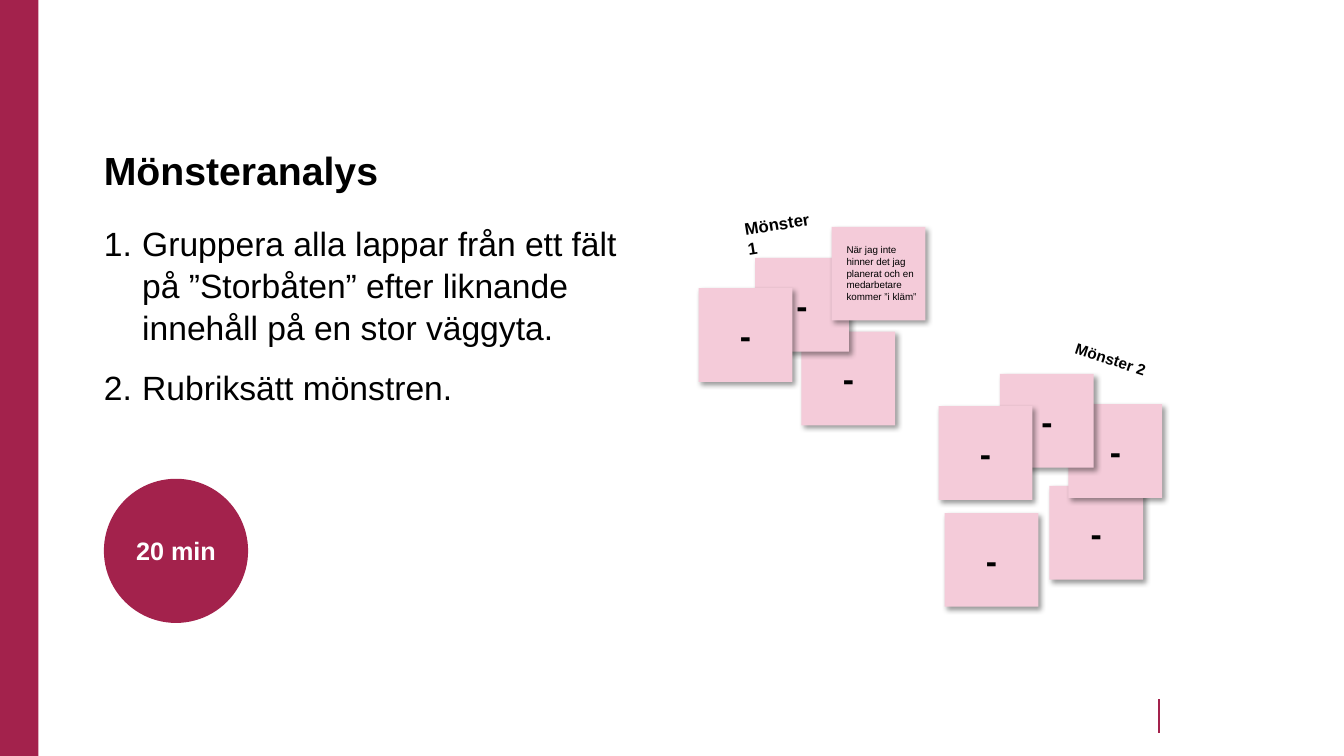
"""Build the pattern analysis slide with two clusters of sticky notes."""
from lxml import etree
from pptx import Presentation
from pptx.dml.color import RGBColor
from pptx.enum.shapes import MSO_CONNECTOR, MSO_SHAPE
from pptx.enum.text import MSO_ANCHOR, MSO_AUTO_SIZE, PP_ALIGN
from pptx.oxml import parse_xml
from pptx.oxml.ns import nsdecls, qn
from pptx.util import Inches, Pt

RECT, OVAL = MSO_SHAPE.RECTANGLE, MSO_SHAPE.OVAL
LINE = MSO_CONNECTOR.STRAIGHT
LEFT, CENTER = PP_ALIGN.LEFT, PP_ALIGN.CENTER
MIDDLE, BOTTOM = MSO_ANCHOR.MIDDLE, MSO_ANCHOR.BOTTOM
GROW, FIXED = MSO_AUTO_SIZE.SHAPE_TO_FIT_TEXT, MSO_AUTO_SIZE.NONE

WINE = RGBColor(0xA3, 0x22, 0x4C)
PINK = RGBColor(0xF4, 0xCB, 0xD9)
BLACK = RGBColor(0, 0, 0)
WHITE = RGBColor(255, 255, 255)

deck = Presentation()
deck.slide_width, deck.slide_height = Inches(13.33), Inches(7.5)
COL, ROW = deck.slide_width / 100, deck.slide_height / 100
slide = deck.slides.add_slide(deck.slide_layouts[1])
shapes = slide.shapes


def spot(col, row, wide, high):
    """Turn shares of the slide, in percent, into a place and size."""
    return int(col * COL), int(row * ROW), int(wide * COL), int(high * ROW)


def say(para, text, size, color=BLACK, bold=False, align=LEFT):
    """Add one run of text to a paragraph."""
    para.alignment = align
    run = para.add_run()
    run.text = text
    run.font.name = "Arial"
    run.font.size = Pt(size)
    run.font.bold = bold
    run.font.color.rgb = color


bar = shapes.add_shape(RECT, *spot(0, 0, 2.85, 100))
bar.shadow.inherit = False
bar.fill.solid()
bar.fill.fore_color.rgb = WINE
bar.line.fill.background()

x, top, _, tall = spot(86.25, 92.53, 0, 4.4)
mark = shapes.add_connector(LINE, x, top, x, top + tall)
mark.line.color.rgb = WINE
mark.line.width = Pt(1.5)
etree.SubElement(mark._element.spPr, qn("a:effectLst"))

title = shapes.title
title.left, title.top, title.width, title.height = spot(6.98, 12.93, 59.03, 13.33)
title.text_frame.vertical_anchor = BOTTOM
title.text_frame.auto_size = FIXED
say(title.text_frame.paragraphs[0], "Mönsteranalys", 28, bold=True)

body = slide.placeholders[1]
body.left, body.top, body.width, body.height = spot(6.98, 28.53, 40.88, 32.4)
body.text_frame.auto_size = FIXED
steps = [
    "Gruppera alla lappar från ett fält på ”Storbåten” efter liknande innehåll på en stor väggyta.",
    "Rubriksätt mönstren.",
]
for i, step in enumerate(steps):
    para = body.text_frame.add_paragraph() if i else body.text_frame.paragraphs[0]
    props = para._p.get_or_add_pPr()
    props.set("marL", str(Inches(0.38)))
    props.set("indent", str(-Inches(0.38)))
    etree.SubElement(props, qn("a:buFont"), typeface="Arial")
    etree.SubElement(props, qn("a:buAutoNum"), type="arabicPeriod")
    para.line_spacing = 1.05
    para.space_before = Pt(12 if i else 0)
    say(para, step, 24)

notes = [
    (59.63, 43.87, "-"), (56.18, 34.13, "-"), (51.98, 38.13, "-"),
    (70.28, 67.87, "-"), (78.08, 64.27, "-"), (79.5, 53.47, "-"),
    (74.4, 49.47, "-"), (69.83, 53.73, "-"), (61.88, 30, ""),
]
for col, row, text in notes:
    note = shapes.add_shape(RECT, *spot(col, row, 6.98, 12.4))
    note.fill.solid()
    note.fill.fore_color.rgb = PINK
    note.line.fill.background()
    note.shadow.inherit = False
    note._element.spPr.find(qn("a:effectLst")).append(parse_xml(
        f'<a:outerShdw {nsdecls("a")} blurRad="{Pt(4)}" dist="{Pt(3)}" dir="2700000" '
        'algn="tl" rotWithShape="0"><a:srgbClr val="000000">'
        '<a:alpha val="40000"/></a:srgbClr></a:outerShdw>'))
    if text:
        note.text_frame.vertical_anchor = MIDDLE
        say(note.text_frame.paragraphs[0], text, 24, bold=True, align=CENTER)

disc = shapes.add_shape(OVAL, *spot(7.73, 63.33, 10.73, 19.07))
disc.shadow.inherit = False
disc.fill.solid()
disc.fill.fore_color.rgb = WINE
disc.line.fill.background()
disc.text_frame.vertical_anchor = MIDDLE
say(disc.text_frame.paragraphs[0], "20 min", 18, WHITE, True, CENTER)

labels = [
    ((62.25, 31.6, 7.2, 10.8), 0, 7, False,
     "När jag inte hinner det jag planerat och en medarbetare kommer ”i kläm”"),
    ((54.75, 27.47, 7.2, 6.67), 351, 12, True, "Mönster 1"),
    ((78.75, 45.6, 7.35, 8.8), 18, 11, True, "Mönster 2"),
]
for area, turn, size, bold, text in labels:
    label = shapes.add_textbox(*spot(*area))
    label.rotation = turn
    label.text_frame.word_wrap = True
    label.text_frame.auto_size = GROW
    say(label.text_frame.paragraphs[0], text, size, bold=bold)

deck.save("out.pptx")
